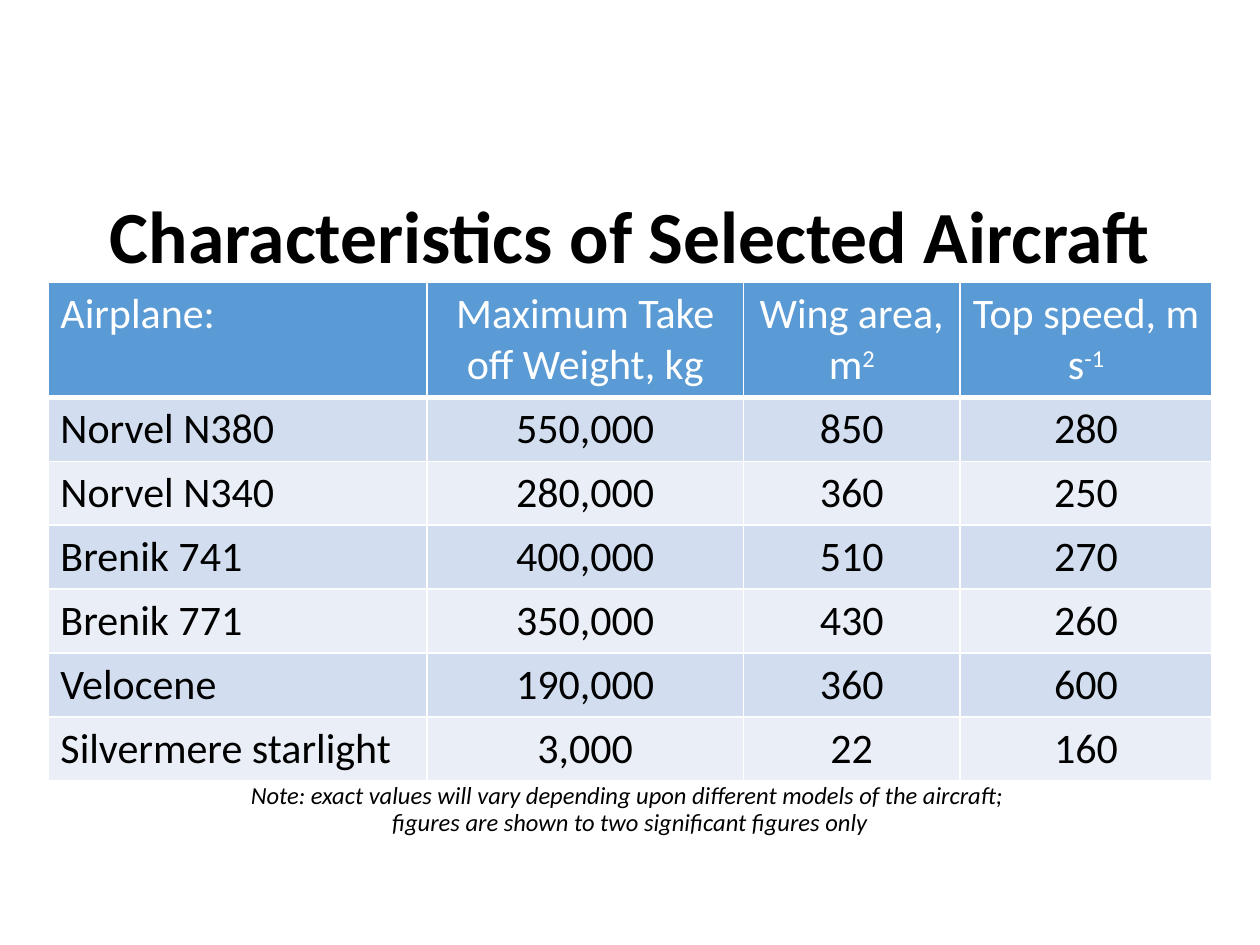
from lxml import etree
from pptx import Presentation
from pptx.dml.color import RGBColor
from pptx.enum.text import MSO_ANCHOR, MSO_AUTO_SIZE, PP_ALIGN
from pptx.oxml.ns import qn
from pptx.util import Inches, Pt

CENTER, LEFT = PP_ALIGN.CENTER, PP_ALIGN.LEFT
TOP, BOTTOM = MSO_ANCHOR.TOP, MSO_ANCHOR.BOTTOM
NO_AUTOFIT = MSO_AUTO_SIZE.NONE

BLACK = RGBColor(0x00, 0x00, 0x00)
WHITE = RGBColor(0xFF, 0xFF, 0xFF)
HEADER_BLUE = RGBColor(0x5B, 0x9B, 0xD5)
BAND_COLORS = (RGBColor(0xD2, 0xDE, 0xEF), RGBColor(0xEA, 0xEF, 0xF7))
FONT = "Calibri"

TITLE = "Characteristics of Selected Aircraft"
NOTE = (
    "Note: exact values will vary depending upon different models of the aircraft; ",
    "figures are shown to two significant figures only",
)
HEADER = (
    ("Airplane:", ""),
    ("Maximum Take off Weight, kg", ""),
    ("Wing area, m", "2"),
    ("Top speed, m s", "-1"),
)
AIRCRAFT = (
    ("Norvel N380", "550,000", "850", "280"),
    ("Norvel N340", "280,000", "360", "250"),
    ("Brenik 741", "400,000", "510", "270"),
    ("Brenik 771", "350,000", "430", "260"),
    ("Velocene", "190,000", "360", "600"),
    ("Silvermere starlight", "3,000", "22", "160"),
)
COLUMN_WIDTHS = (3.01, 2.51, 1.72, 2)
HEADER_HEIGHT, ROW_HEIGHT = 0.91, 0.5


def add_run(paragraph, text, size, color, bold=False, italic=False):
    run = paragraph.add_run()
    run.text = text
    font = run.font
    font.name, font.size, font.color.rgb = FONT, Pt(size), color
    font.bold, font.italic = bold, italic
    return run


def fill_placeholder(placeholder, box, lines, anchor, spacing, **style):
    placeholder.left, placeholder.top, placeholder.width, placeholder.height = map(Inches, box)
    frame = placeholder.text_frame
    frame.word_wrap = True
    frame.auto_size = NO_AUTOFIT
    frame.vertical_anchor = anchor
    for index, line in enumerate(lines):
        paragraph = frame.add_paragraph() if index else frame.paragraphs[0]
        paragraph.alignment = CENTER
        paragraph.line_spacing = spacing
        paragraph.space_before = Pt(0)
        add_run(paragraph, line, color=BLACK, **style)


def set_borders(cell, bottom_width, top_width):
    properties = cell._tc.get_or_add_tcPr()
    widths = {"a:lnL": 1, "a:lnR": 1, "a:lnT": top_width, "a:lnB": bottom_width}
    for side, width in widths.items():
        line = etree.SubElement(properties, qn(side), w=str(Pt(width)))
        solid = etree.SubElement(line, qn("a:solidFill"))
        etree.SubElement(solid, qn("a:srgbClr"), val=str(WHITE))


def fill_cell(cell, row, column, text, exponent=""):
    text_color = BLACK if row else WHITE
    set_borders(cell, bottom_width=1 if row else 3, top_width=3 if row == 1 else 1)
    cell.fill.solid()
    cell.fill.fore_color.rgb = BAND_COLORS[(row - 1) % 2] if row else HEADER_BLUE
    paragraph = cell.text_frame.paragraphs[0]
    paragraph.alignment = CENTER if column else LEFT
    add_run(paragraph, text, 24, text_color)
    if exponent:
        power = add_run(paragraph, exponent, 24, text_color)
        power.font._element.set("baseline", "30000")


def add_aircraft_table(slide, box):
    rows = [HEADER] + [[(value, "") for value in plane] for plane in AIRCRAFT]
    table = slide.shapes.add_table(len(rows), len(HEADER), *map(Inches, box)).table
    for column, width in zip(table.columns, COLUMN_WIDTHS):
        column.width = Inches(width)
    for row, contents in enumerate(rows):
        table.rows[row].height = Inches(ROW_HEIGHT if row else HEADER_HEIGHT)
        for column, content in enumerate(contents):
            fill_cell(table.cell(row, column), row, column, *content)


def main():
    presentation = Presentation()
    presentation.slide_width, presentation.slide_height = Inches(10), Inches(7.5)
    slide = presentation.slides.add_slide(presentation.slide_layouts[0])
    title, note = slide.placeholders
    fill_placeholder(title, (0.69, 1.41, 8.62, 0.83), [TITLE], BOTTOM, 0.7, size=42, bold=True)
    add_aircraft_table(slide, (0.38, 2.24, 9.24, 3.9))
    fill_placeholder(note, (0.69, 6.17, 8.62, 0.73), NOTE, TOP, 0.9, size=14, italic=True)
    presentation.save("out.pptx")


if __name__ == "__main__":
    main()
